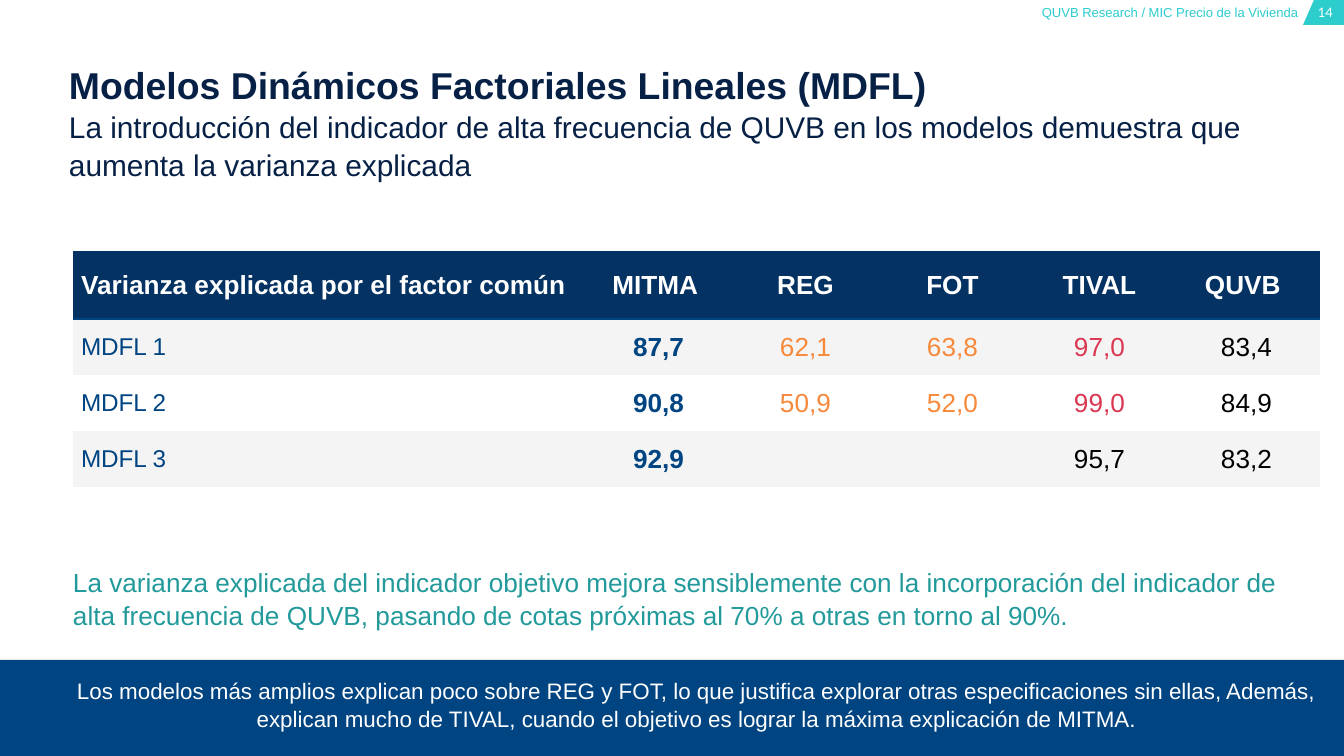
"""Builds the slide on variance explained by the linear dynamic factor models."""
from lxml import etree
from pptx import Presentation
from pptx import util as u
from pptx.dml.color import RGBColor
from pptx.enum import shapes, text
from pptx.oxml import ns

PX = 914400 / 134.4
NAVY = RGBColor(0x04, 0x32, 0x63)
INK = RGBColor(0x07, 0x21, 0x46)
BLUE = RGBColor(0x00, 0x44, 0x81)
AQUA = RGBColor(0x2D, 0xCC, 0xCD)
TEAL = RGBColor(0x22, 0x99, 0x9A)
ORANGE = RGBColor(0xF7, 0x89, 0x3B)
RED = RGBColor(0xDA, 0x38, 0x51)
GRAY = RGBColor(0xF4, 0xF4, 0xF4)
WHITE = RGBColor(0xFF, 0xFF, 0xFF)
BLACK = RGBColor(0x00, 0x00, 0x00)
LEFT, CENTER, RIGHT = text.PP_ALIGN.LEFT, text.PP_ALIGN.CENTER, text.PP_ALIGN.RIGHT


def style(paragraph, size, color, align=LEFT, bold=False, name="Arial"):
    paragraph.alignment = align
    font = paragraph.font
    font.name, font.size, font.bold = name, u.Pt(size), bold
    font.color.rgb = color


def add_text(box, content, size, color, align=LEFT, name="Arial", anchor=text.MSO_ANCHOR.TOP):
    frame = slide.shapes.add_textbox(*[round(value * PX) for value in box]).text_frame
    frame.word_wrap = True
    frame.vertical_anchor = anchor
    frame.margin_left = frame.margin_top = frame.margin_right = frame.margin_bottom = 0
    paragraph = frame.paragraphs[0]
    paragraph.text = content
    paragraph.line_spacing = 1.05
    style(paragraph, size, color, align, name=name)
    return paragraph


presentation = Presentation()
presentation.slide_width = round(1344 * PX)
presentation.slide_height = round(756 * PX)
slide = presentation.slides.add_slide(presentation.slide_layouts[6])

banner = slide.shapes.add_shape(
    shapes.MSO_SHAPE.RECTANGLE, 0, round(660 * PX), round(1344 * PX), round(96 * PX))
builder = slide.shapes.build_freeform(1314, 0, scale=PX)
builder.add_line_segments([(1344, 0), (1344, 25), (1303, 25)], close=True)
page_tab = builder.convert_to_shape()
for shape, color in ((banner, BLUE), (page_tab, AQUA)):
    shape.shadow.inherit = False
    shape.fill.solid()
    shape.fill.fore_color.rgb = color
    shape.line.fill.background()

add_text((1310, 4, 31, 16), "14", 7, WHITE, CENTER, "Lato")
add_text((1000, 4, 298, 16), "QUVB Research / MIC Precio de la Vivienda", 7, AQUA, RIGHT)
add_text((74, 677, 1246, 54),
         "Los modelos más amplios explican poco sobre REG y FOT, lo que justifica explorar otras "
         "especificaciones sin ellas, Además, explican mucho de TIVAL, cuando el objetivo es lograr "
         "la máxima explicación de MITMA.",
         12, WHITE, CENTER, anchor=text.MSO_ANCHOR.MIDDLE)

rows = [
    ["Varianza explicada por el factor común", "MITMA ", "REG", "FOT", "TIVAL", "QUVB "],
    ["MDFL 1", "87,7", "62,1", "63,8", "97,0", "83,4"],
    ["MDFL 2", "90,8", "50,9", "52,0", "99,0", "84,9"],
    ["MDFL 3", "92,9", "", "", "95,7", "83,2"],
]
column_colors = [BLUE, BLUE, ORANGE, ORANGE, RED, BLACK]
column_widths = [512] + [147] * 5
row_heights = [68] + [56] * 3
table = slide.shapes.add_table(
    len(rows), len(column_widths), round(73 * PX), round(251 * PX),
    round(sum(column_widths) * PX), round(sum(row_heights) * PX)).table
table.first_row = table.horz_banding = False
table._tbl.tblPr[0].text = "{2D5ABB26-0587-4C30-8999-92F81FD0307C}"
for column, width in zip(table.columns, column_widths):
    column.width = round(width * PX)
for row, height in zip(table.rows, row_heights):
    row.height = round(height * PX)

for i, values in enumerate(rows):
    for j, value in enumerate(values):
        header, label = i == 0, j == 0
        cell = table.cell(i, j)
        cell.vertical_anchor = text.MSO_ANCHOR.MIDDLE
        cell.margin_left = round(8 * PX) if label else 0
        cell.margin_top = cell.margin_right = cell.margin_bottom = 0
        cell.fill.solid()
        cell.fill.fore_color.rgb = NAVY if header else GRAY if i % 2 else WHITE
        color = WHITE if header else BLACK if value == "95,7" else column_colors[j]
        paragraph = cell.text_frame.paragraphs[0]
        paragraph.text = value
        style(paragraph, 13 if label and not header else 14, color,
              LEFT if label else CENTER, header or j == 1)
        if header:
            border = etree.Element(ns.qn("a:lnB"), w=str(u.Pt(0.75)))
            fill = etree.SubElement(border, ns.qn("a:solidFill"))
            etree.SubElement(fill, ns.qn("a:srgbClr"), val=str(BLUE))
            cell._tc.get_or_add_tcPr().insert(0, border)

add_text((73, 565, 1246, 74),
         "La varianza explicada del indicador objetivo mejora sensiblemente con la incorporación del "
         "indicador de alta frecuencia de QUVB, pasando de cotas próximas al 70% a otras en torno al 90%.",
         14, TEAL)

title = add_text((69, 60, 1250, 120), "Modelos Dinámicos Factoriales Lineales (MDFL)", 20, INK)
title.runs[0].font.bold = True
title.add_line_break()
subtitle = title.add_run()
subtitle.text = ("La introducción del indicador de alta frecuencia de QUVB en los modelos demuestra que "
                 "aumenta la varianza explicada")
subtitle.font.size = u.Pt(16)

presentation.save("out.pptx")
